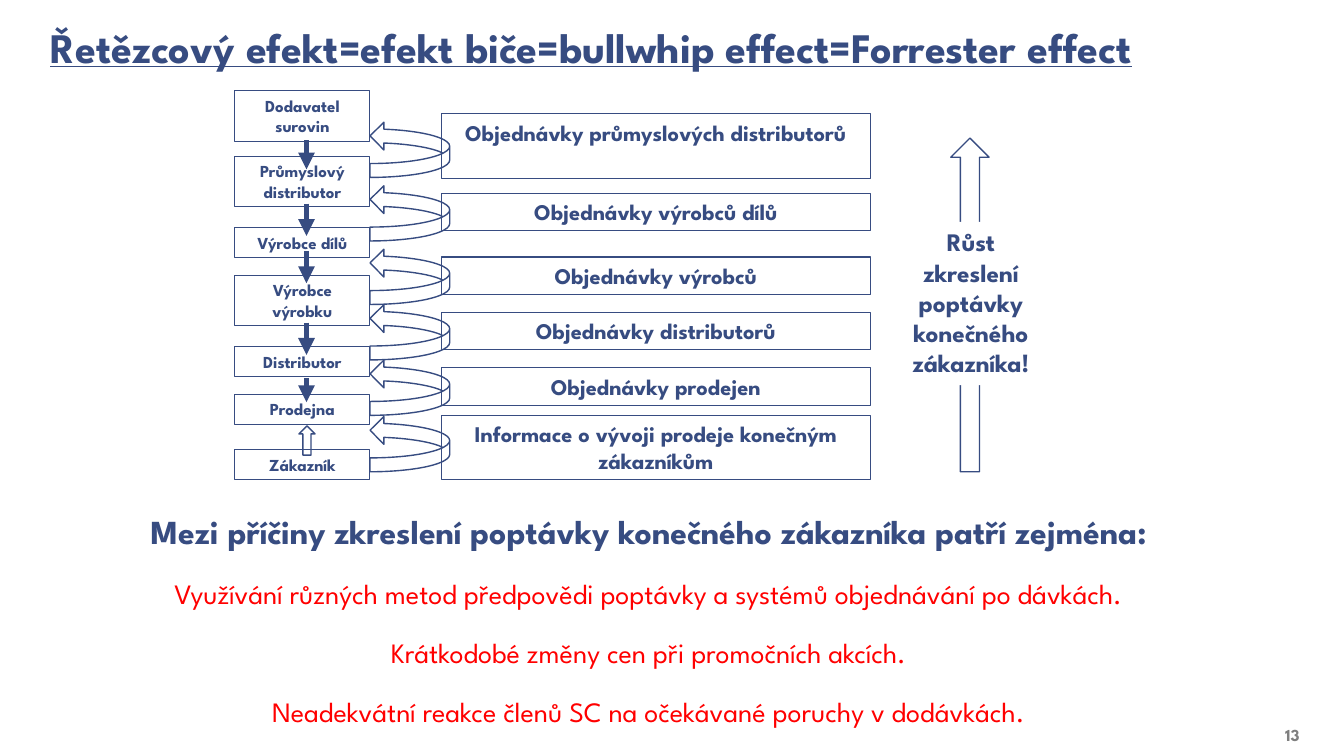
from pptx import Presentation
from pptx.dml.color import RGBColor
from pptx.enum.shapes import MSO_CONNECTOR, MSO_SHAPE
from pptx.enum.text import MSO_ANCHOR, PP_ALIGN
from pptx.oxml.ns import qn
from pptx.util import Inches, Pt
from lxml import etree

RECT, UP = MSO_SHAPE.RECTANGLE, MSO_SHAPE.UP_ARROW
RIGHT, CURVE = MSO_SHAPE.RIGHT_ARROW, MSO_SHAPE.CURVED_UP_ARROW
LINE = MSO_CONNECTOR.STRAIGHT
TOP, BOTTOM = MSO_ANCHOR.TOP, MSO_ANCHOR.BOTTOM
LEFT, CENTER, END = PP_ALIGN.LEFT, PP_ALIGN.CENTER, PP_ALIGN.RIGHT
NAVY, WHITE, RED, GRAY = "374C81", "FFFFFF", "FF0000", "7F7F7F"

deck = Presentation()
deck.slide_width, deck.slide_height = Inches(13.33), Inches(7.5)
slide = deck.slides.add_slide(deck.slide_layouts[6])
shapes = slide.shapes


def draw(kind, at, fill=WHITE, line=0.75, turn=0):
    shape = shapes.add_shape(kind, *map(Inches, at))
    shape.shadow.inherit = False
    shape.rotation = turn
    if fill:
        shape.fill.solid()
        shape.fill.fore_color.rgb = RGBColor.from_string(fill)
    else:
        shape.fill.background()
    if line:
        shape.line.color.rgb = RGBColor.from_string(NAVY)
        shape.line.width = Pt(line)
    else:
        shape.line.fill.background()
    return shape


def write(shape, text, size, color=NAVY, bold=True, align=CENTER, anchor=TOP):
    frame = shape.text_frame
    frame.word_wrap = True
    frame.vertical_anchor = anchor
    para = frame.add_paragraph() if frame.text else frame.paragraphs[0]
    para.text = text
    para.alignment = align
    para.font.name = "League Spartan"
    para.font.size = Pt(size)
    para.font.bold = bold
    para.font.color.rgb = RGBColor.from_string(color)
    return para


title = shapes.add_textbox(Inches(0.37), Inches(-0.74), Inches(12.96), Inches(1.53))
number = shapes.add_textbox(Inches(11.81), Inches(7.11), Inches(1.21), Inches(0.35))
for box in (title, number):
    frame = box.text_frame
    frame.margin_left = frame.margin_right = Inches(0.13)
    frame.margin_top = frame.margin_bottom = Inches(0.07)
head = write(title, "Řetězcový efekt=efekt biče=bullwhip effect=Forrester effect",
             30, align=LEFT, anchor=BOTTOM)
head.font.underline = True
head.line_spacing = 0.85
write(number, "13", 12, GRAY, align=END, anchor=BOTTOM)

chain = [
    ("Dodavatel surovin", 0.9, 0.5),
    ("Průmyslový distributor", 1.55, 0.5),
    ("Výrobce dílů", 2.26, 0.3),
    ("Výrobce výrobku", 2.73, 0.5),
    ("Distributor", 3.44, 0.3),
    ("Prodejna", 3.91, 0.3),
    ("Zákazník", 4.46, 0.3),
]
for text, top, height in chain:
    write(draw(RECT, (2.33, top, 1.34, height)), text, 12)

for start, stop in [(1.39, 1.68), (2.02, 2.34), (2.49, 2.81), (3.2, 3.52), (3.75, 3.99)]:
    flow = shapes.add_connector(LINE, Inches(3.04), Inches(start), Inches(3.04), Inches(stop))
    flow.line.color.rgb = RGBColor.from_string(NAVY)
    flow.line.width = Pt(4)
    etree.SubElement(flow.line._get_or_add_ln(), qn("a:tailEnd"), type="triangle")
    etree.SubElement(flow._element.spPr, qn("a:effectLst"))

draw(RIGHT, (2.9, 4.29, 0.29, 0.16), None, 1, 270)

orders = [
    ("Objednávky průmyslových distributorů", 1.13, 0.64),
    ("Objednávky výrobců dílů", 1.92, 0.37),
    ("Objednávky výrobců", 2.55, 0.37),
    ("Objednávky distributorů", 3.1, 0.37),
    ("Objednávky prodejen", 3.65, 0.37),
    ("Informace o vývoji prodeje konečným zákazníkům", 4.12, 0.64),
]
for text, top, height in orders:
    write(draw(RECT, (4.38, top, 4.25, height)), text, 16)

for top in (1.09, 1.72, 2.35, 2.9, 3.45, 4.01):
    draw(CURVE, (3.79, top, 0.55, 0.79), None, 1, 270)

draw(UP, (9.43, 1.37, 0.38, 3.31), line=1)
growth = draw(RECT, (8.8, 2.2, 1.66, 1.62), line=0)
write(growth, "Růst zkreslení poptávky konečného zákazníka!", 18)

causes = draw(RECT, (0.6, 5.02, 11.67, 2.27), line=0)
write(causes, "Mezi příčiny zkreslení poptávky konečného zákazníka patří zejména:", 24)
for text in (
    "Využívání různých metod předpovědi poptávky a systémů objednávání po dávkách.",
    "Krátkodobé změny cen při promočních akcích.",
    "Neadekvátní reakce členů SC na očekávané poruchy v dodávkách.",
):
    write(causes, text, 20, RED, False).space_before = Pt(18)

deck.save("out.pptx")
